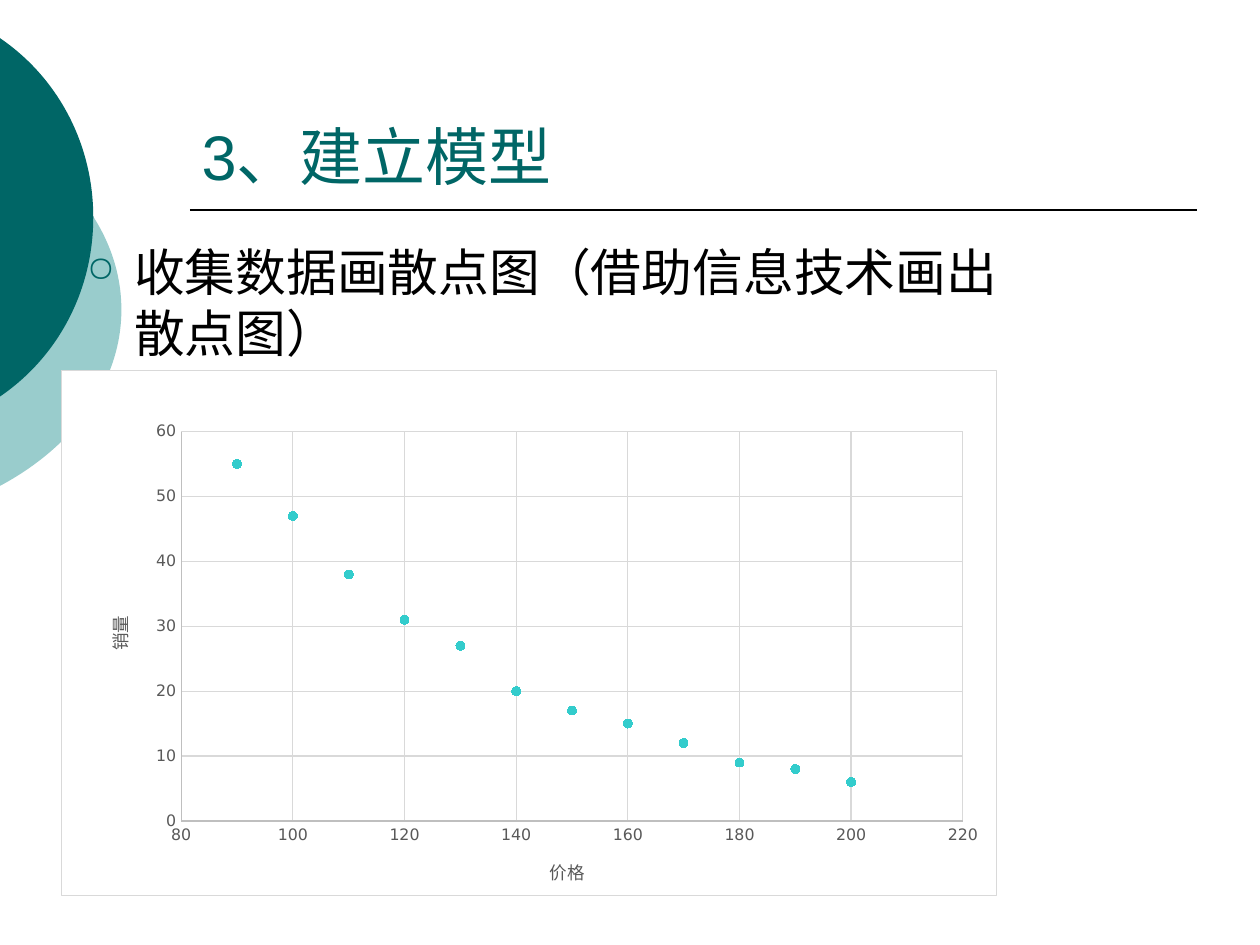
from lxml import etree
from pptx import Presentation
from pptx import util as u
from pptx.chart.data import XyChartData
from pptx.dml.color import RGBColor
from pptx.enum import chart as ch, shapes, text
from pptx.oxml import parse_xml
from pptx.oxml.ns import nsdecls, qn

Pt = u.Pt
TEAL = RGBColor(0x00, 0x66, 0x66)
PALE_TEAL = RGBColor(0x99, 0xCC, 0xCC)
TURQUOISE = RGBColor(0x33, 0xCC, 0xCC)
BLACK = RGBColor(0, 0, 0)
WHITE = RGBColor(0xFF, 0xFF, 0xFF)
GRID = RGBColor(0xD9, 0xD9, 0xD9)
AXIS = RGBColor(0xBF, 0xBF, 0xBF)
LABEL = RGBColor(0x59, 0x59, 0x59)
CHART_FONT = "DejaVu Sans"

PRICES = range(200, 80, -10)
SALES = [6, 8, 9, 12, 15, 17, 20, 27, 31, 38, 47, 55]


def style_font(font, name, size, color):
    font.name, font.size = name, Pt(size)
    font.color.rgb = color


def add_disc_edge(slide, frame, upper_arc, color):
    """Draw the right edge of a disc inside frame (left, top, width, height).

    upper_arc holds the four Bezier points from the slide's left edge to the
    rightmost point; the lower arc mirrors it.
    """
    left, top, width, height = frame
    middle = upper_arc[-1][1]
    lower_arc = [(x, 2 * middle - y) for x, y in reversed(upper_arc[:-1])]
    builder = slide.shapes.build_freeform(*upper_arc[0], scale=Pt(1))
    builder.add_line_segments([upper_arc[-1], lower_arc[-1]], close=True)
    disc = builder.convert_to_shape()
    disc.left, disc.top, disc.width, disc.height = map(Pt, frame)
    disc.shadow.inherit = False
    disc.fill.solid()
    disc.fill.fore_color.rgb = color
    disc.line.fill.background()

    outline = disc.element.find(".//" + qn("a:pathLst"))[0]
    outline.set("w", str(Pt(width)))
    outline.set("h", str(Pt(height)))
    for command in list(outline):
        outline.remove(command)
    for name, points in (("moveTo", upper_arc[:1]), ("cubicBezTo", upper_arc[1:]),
                         ("cubicBezTo", lower_arc), ("close", [])):
        command = etree.SubElement(outline, qn(f"a:{name}"))
        for x, y in points:
            etree.SubElement(command, qn("a:pt"), x=str(Pt(x - left)), y=str(Pt(y - top)))


def add_rule(slide, left, right, y):
    rule = slide.shapes.add_connector(
        shapes.MSO_CONNECTOR.STRAIGHT, Pt(left), Pt(y), Pt(right), Pt(y))
    rule.line.color.rgb = BLACK
    rule.line.width = Pt(1)
    etree.SubElement(rule.element.spPr, qn("a:effectLst"))


def set_title(slide, words):
    title = slide.shapes.title
    title.left, title.top, title.width, title.height = Pt(108), Pt(24), Pt(576), Pt(90)
    frame = title.text_frame
    frame.text = words
    frame.vertical_anchor = text.MSO_ANCHOR.BOTTOM
    frame.auto_size = text.MSO_AUTO_SIZE.NONE
    para = frame.paragraphs[0]
    para.alignment = text.PP_ALIGN.LEFT
    style_font(para.font, "Arial", 36, TEAL)


def add_bullet_text(slide, words):
    box = slide.shapes.add_textbox(Pt(42.5), Pt(134), Pt(547), Pt(302))
    box.text_frame.word_wrap = True
    para = box.text_frame.paragraphs[0]
    para.text = words
    para.space_before = Pt(5.8)
    style_font(para.font, CHART_FONT, 29, BLACK)
    properties = para._p.get_or_add_pPr()
    properties.set("marL", str(Pt(27)))
    properties.set("indent", str(-Pt(27)))
    bullet = parse_xml(
        f'<a:pPr {nsdecls("a")}><a:buClr><a:srgbClr val="{TEAL}"/></a:buClr>'
        '<a:buSzPct val="70000"/><a:buFont typeface="OpenSymbol"/>'
        '<a:buChar char="○"/></a:pPr>')
    spacing = properties.find(qn("a:spcBef"))
    for element in reversed(list(bullet)):
        spacing.addnext(element)


def format_axis(axis, words, low, high, step, rotation):
    axis.minimum_scale, axis.maximum_scale, axis.major_unit = low, high, step
    axis.major_tick_mark = axis.minor_tick_mark = ch.XL_TICK_MARK.NONE
    axis.has_major_gridlines = True
    for line, color in ((axis.format.line, AXIS),
                        (axis.major_gridlines.format.line, GRID)):
        line.color.rgb = color
        line.width = Pt(0.75)
    style_font(axis.tick_labels.font, CHART_FONT, 9, LABEL)
    frame = axis.axis_title.text_frame
    frame.text = words
    style_font(frame.paragraphs[0].font, CHART_FONT, 10, LABEL)
    frame.paragraphs[0].font.bold = False
    frame._txBody.find(qn("a:bodyPr")).set("rot", str(rotation * 60000))


def frame_chart(chart):
    """Give the chart its white background, thin border and fixed plot area."""
    space = chart._chartSpace
    space.find(qn("c:chart")).addnext(parse_xml(
        f'<c:spPr {nsdecls("c", "a")}>'
        f'<a:solidFill><a:srgbClr val="{WHITE}"/></a:solidFill>'
        f'<a:ln w="{Pt(0.75)}"><a:solidFill><a:srgbClr val="{GRID}"/></a:solidFill></a:ln>'
        '</c:spPr>'))
    plot_area = space.find(".//" + qn("c:plotArea"))
    for layout in plot_area.findall(qn("c:layout")):
        plot_area.remove(layout)
    settings = {"layoutTarget": "inner", "xMode": "edge", "yMode": "edge",
                "x": 0.128, "y": 0.117, "w": 0.836, "h": 0.741}
    entries = "".join(f'<c:{name} val="{value}"/>' for name, value in settings.items())
    plot_area.insert(0, parse_xml(
        f'<c:layout {nsdecls("c")}><c:manualLayout>{entries}</c:manualLayout></c:layout>'))


def add_scatter(slide):
    data = XyChartData()
    points = data.add_series("Series 1")
    for price, sales in zip(PRICES, SALES):
        points.add_data_point(price, sales)
    chart = slide.shapes.add_chart(
        ch.XL_CHART_TYPE.XY_SCATTER, Pt(34.8), Pt(211.2), Pt(535), Pt(301), data).chart
    chart.has_title = chart.has_legend = False
    style_font(chart.font, CHART_FONT, 10, BLACK)
    chart.plots[0].vary_by_categories = False
    series = chart.plots[0].series[0]
    series.smooth = False
    series.format.line.fill.background()
    marker = series.marker
    marker.style, marker.size = ch.XL_MARKER_STYLE.CIRCLE, 5
    marker.format.fill.solid()
    marker.format.fill.fore_color.rgb = TURQUOISE
    marker.format.line.color.rgb = TURQUOISE
    format_axis(chart.category_axis, "价格", 80, 220, 20, 0)
    format_axis(chart.value_axis, "销量", 0, 60, 10, -90)
    frame_chart(chart)


def main():
    deck = Presentation()
    deck.slide_width, deck.slide_height = Pt(720), Pt(540)
    slide = deck.slides.add_slide(deck.slide_layouts.get_by_name("Title Only"))
    add_disc_edge(slide, (-254, 54, 324, 246),
                  [(0, 76.3), (41.8, 98.6), (69.4, 135.4), (69.4, 177)], PALE_TEAL)
    add_disc_edge(slide, (-190, 0, 243.4, 248.4),
                  [(0, 21.8), (32.4, 43.9), (53.3, 81.4), (53.3, 124.2)], TEAL)
    add_rule(slide, 108.5, 684, 120)
    set_title(slide, "3、建立模型")
    add_bullet_text(slide, "收集数据画散点图（借助信息技术画出散点图）")
    add_scatter(slide)
    deck.save("out.pptx")


if __name__ == "__main__":
    main()
